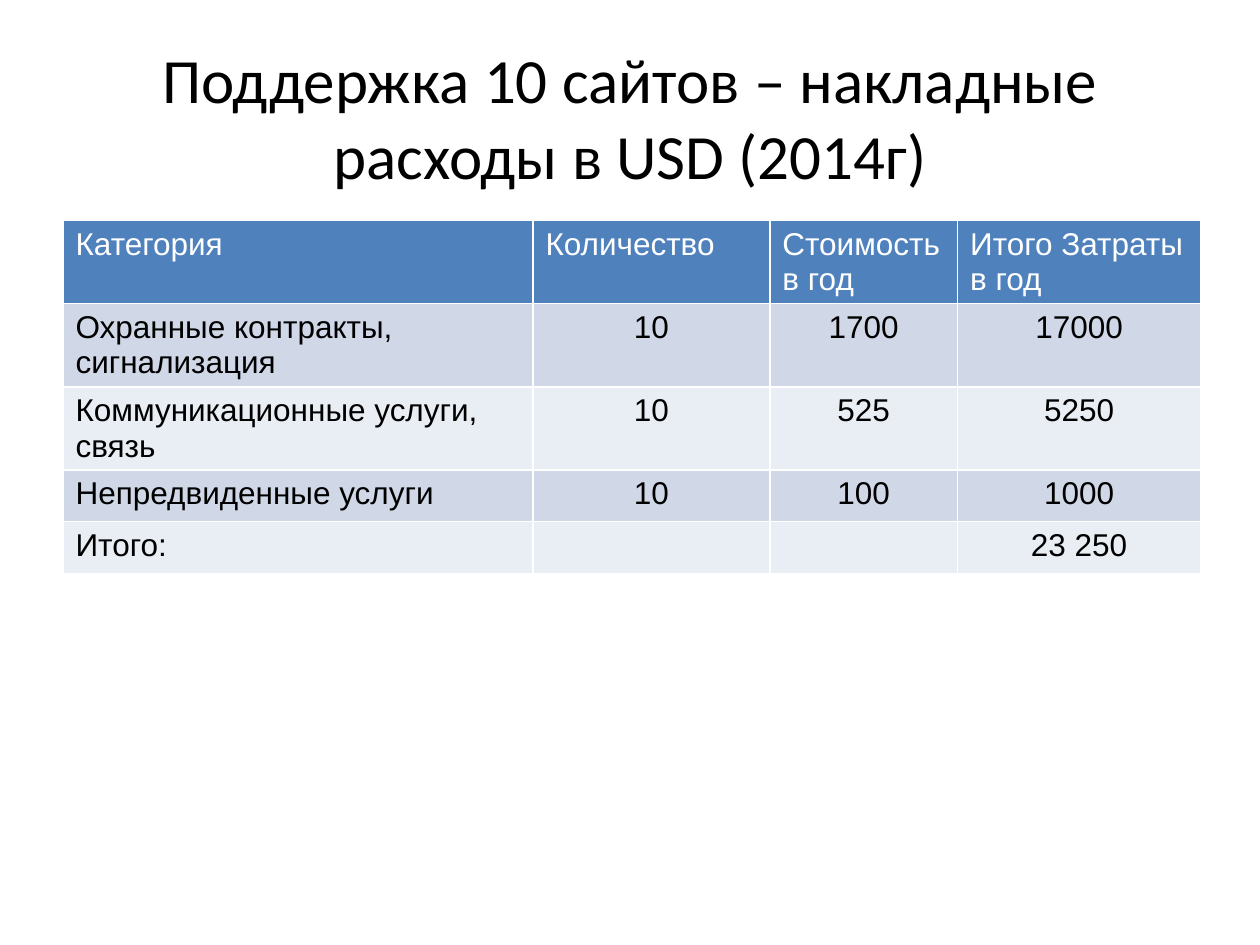
"""Build a slide with a table of yearly overhead costs for ten sites."""
import pptx
import pptx.dml.color
import pptx.enum.text
import pptx.util

COLORS = {"head": "4F81BD", "odd": "D0D8E8", "even": "E9EDF4", "light": "FFFFFF", "dark": "000000"}
TITLE = {"name": "Calibri", "size": pptx.util.Pt(36), "bold": False}
CELL = {"name": "Arial", "size": pptx.util.Pt(18), "bold": False}
ALIGN = pptx.enum.text.PP_ALIGN
COLUMNS = [3.73, 1.88, 1.49, 1.93]
ROW = 0.41
ROWS = [
    ["Категория", "Количество", "Стоимость в год", "Итого Затраты в год"],
    ["Охранные контракты, сигнализация", "10", "1700", "17000"],
    ["Коммуникационные услуги, связь", "10", "525", "5250"],
    ["Непредвиденные услуги", "10", "100", "1000"],
    ["Итого:", "", "", "23 250"],
]


def rgb(name):
    return pptx.dml.color.RGBColor.from_string(COLORS[name])


def write(p, text, align, color, formats):
    p.alignment = align
    r = p.add_run()
    r.text = text
    r.font.color.rgb = rgb(color)
    for key, value in formats.items():
        setattr(r.font, key, value)


prs = pptx.Presentation()
prs.slide_width, prs.slide_height = pptx.util.Inches(10), pptx.util.Inches(7.5)
W, H = prs.slide_width, prs.slide_height
s = prs.slides.add_slide(prs.slide_layouts[5])

title = s.shapes.title
box = {"left": 0.05 * W, "top": 0.04 * H, "width": 0.9 * W, "height": H / 6}
for key, value in box.items():
    setattr(title, key, int(value))
tf = title.text_frame
tf.word_wrap = True
tf.vertical_anchor = pptx.enum.text.MSO_ANCHOR.MIDDLE
write(tf.paragraphs[0], "Поддержка 10 сайтов – накладные расходы в USD (2014г)", ALIGN.CENTER, "dark", TITLE)

table = s.shapes.add_table(
    len(ROWS), len(COLUMNS), int(0.05 * W), pptx.util.Inches(1.75),
    pptx.util.Inches(sum(COLUMNS)), pptx.util.Inches(ROW * len(ROWS)),
).table
for column, width in zip(table.columns, COLUMNS):
    column.width = pptx.util.Inches(width)

for i, texts in enumerate(ROWS):
    table.rows[i].height = pptx.util.Inches(ROW)
    band = "head" if i == 0 else "odd" if i % 2 else "even"
    for j, text in enumerate(texts):
        cell = table.cell(i, j)
        cell.fill.solid()
        cell.fill.fore_color.rgb = rgb(band)
        if text:
            align = ALIGN.CENTER if i and j else ALIGN.LEFT
            write(cell.text_frame.paragraphs[0], text, align, "dark" if i else "light", CELL)

prs.save("out.pptx")
